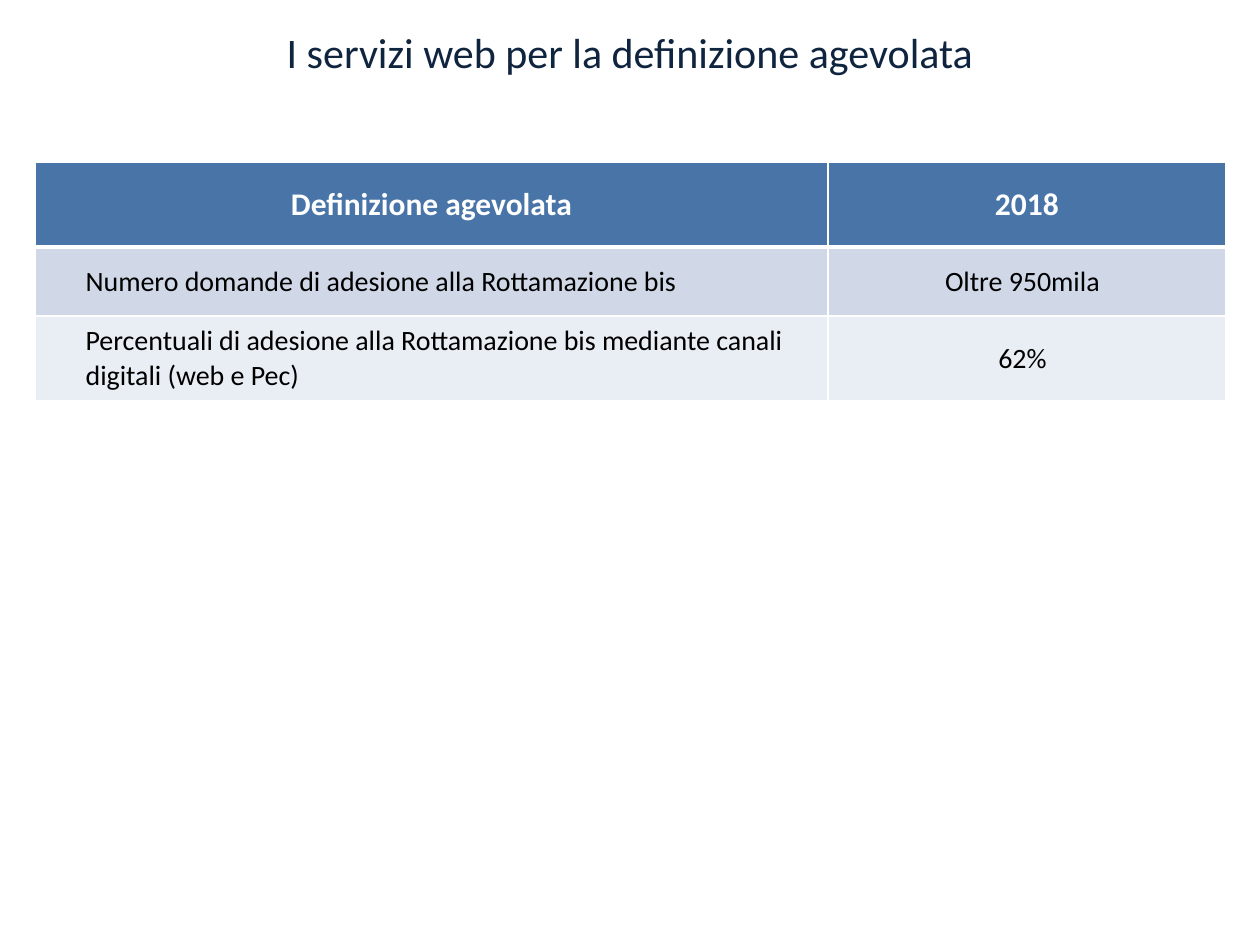
from dataclasses import dataclass

from lxml.etree import SubElement
from pptx import Presentation
from pptx.dml.color import RGBColor
from pptx.enum.text import MSO_ANCHOR as ANCHOR, PP_ALIGN as ALIGN
from pptx.oxml.ns import qn
from pptx.util import Inches, Pt

FONT = "Calibri"
COLORS = {
    "title": "0F243E",
    "header": "4874A8",
    "band_dark": "D0D8E8",
    "band_light": "E9EDF4",
    "white": "FFFFFF",
    "black": "000000",
}
SLIDE_W, SLIDE_H = 10, 7.5
TITLE_BOX = (0.05, 0.02, 0.9, 0.07)  # shares of the slide's size
TABLE_LEFT, TABLE_TOP = 0.28, 1.29
COL_WIDTHS = (6.29, 3.16)
VALUE_MARGINS = (0.01, 0.01, 0.08, 0)
LABEL_INDENT = 0.3
THIN, THICK = 1, 3


@dataclass
class Row:
    label: str
    value: str
    height: float
    fill: str
    header: bool = False


ROWS = [
    Row("Definizione agevolata", "2018", 0.67, "header", header=True),
    Row("Numero domande di adesione alla Rottamazione bis", "Oltre 950mila",
        0.55, "band_dark"),
    Row("Percentuali di adesione alla Rottamazione bis mediante canali "
        "digitali (web e Pec)", "62%", 0.67, "band_light"),
]


def rgb(name: str) -> RGBColor:
    return RGBColor.from_string(COLORS[name])


def format_text(tf, size: float, color: str, bold: bool, align) -> None:
    p = tf.paragraphs[0]
    p.alignment = align
    for r in p.runs:
        r.font.name = FONT
        r.font.size = Pt(size)
        r.font.bold = bold
        r.font.color.rgb = rgb(color)


def set_borders(cell, top: float, bottom: float) -> None:
    """Draw white cell borders; they must precede the fill in tcPr."""
    tc_pr = cell._tc.get_or_add_tcPr()
    widths = {"a:lnL": THIN, "a:lnR": THIN, "a:lnT": top, "a:lnB": bottom}
    for tag, width in widths.items():
        ln = SubElement(tc_pr, qn(tag), w=str(Pt(width)))
        fill = SubElement(ln, qn("a:solidFill"))
        SubElement(fill, qn("a:srgbClr"), val=COLORS["white"])


def add_title(slide, text: str) -> None:
    x, y, w, h = TITLE_BOX
    sp = slide.shapes.add_textbox(Inches(x * SLIDE_W), Inches(y * SLIDE_H),
                                  Inches(w * SLIDE_W), Inches(h * SLIDE_H))
    tf = sp.text_frame
    tf.word_wrap = True
    tf.vertical_anchor = ANCHOR.MIDDLE
    tf.text = text
    format_text(tf, 24, "title", False, ALIGN.CENTER)


def fill_cell(cell, text: str, row: Row, is_label: bool, top: float) -> None:
    set_borders(cell, top, THICK if row.header else THIN)
    cell.fill.solid()
    cell.fill.fore_color.rgb = rgb(row.fill)
    cell.vertical_anchor = ANCHOR.MIDDLE
    tf = cell.text_frame
    tf.text = text
    if row.header:
        format_text(tf, 18, "white", True, ALIGN.CENTER)
        return
    format_text(tf, 16, "black", False, ALIGN.LEFT if is_label else ALIGN.CENTER)
    if is_label:
        p_pr = tf.paragraphs[0]._p.get_or_add_pPr()
        p_pr.set("marL", str(Inches(LABEL_INDENT)))
        p_pr.set("indent", "0")
    else:
        (cell.margin_left, cell.margin_top,
         cell.margin_right, cell.margin_bottom) = map(Inches, VALUE_MARGINS)


def add_data_table(slide, rows: list[Row]) -> None:
    table = slide.shapes.add_table(
        len(rows), len(COL_WIDTHS), Inches(TABLE_LEFT), Inches(TABLE_TOP),
        Inches(sum(COL_WIDTHS)), Inches(sum(row.height for row in rows))).table
    for column, width in zip(table.columns, COL_WIDTHS):
        column.width = Inches(width)
    top = THIN
    for i, row in enumerate(rows):
        table.rows[i].height = Inches(row.height)
        for j, text in enumerate((row.label, row.value)):
            fill_cell(table.cell(i, j), text, row, j == 0, top)
        top = THICK if row.header else THIN


def main() -> None:
    prs = Presentation()
    prs.slide_width, prs.slide_height = Inches(SLIDE_W), Inches(SLIDE_H)
    slide = prs.slides.add_slide(prs.slide_layouts[6])
    add_title(slide, "I servizi web per la definizione agevolata")
    add_data_table(slide, ROWS)
    prs.save("out.pptx")


if __name__ == "__main__":
    main()
